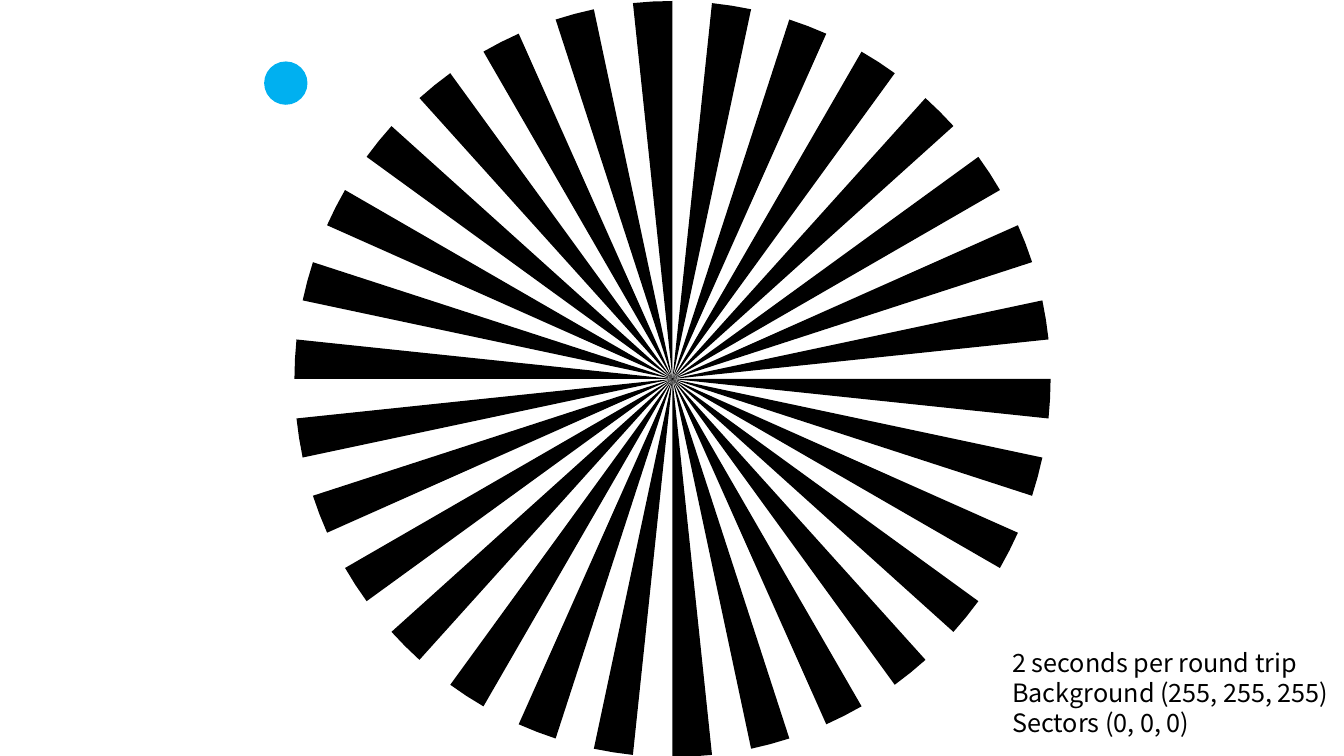
from math import cos, radians, sin

from pptx import Presentation
from pptx import util as u
from pptx.dml.color import RGBColor
from pptx.enum import shapes, text

WIDE, HIGH = 13.33, 7.5
FONT = "Noto Sans CJK JP"
BLACK, BLUE, WHITE = "000000", "00B0F0", "FFFFFF"
NOTES = [
    "2 seconds per round trip",
    "Background (255, 255, 255)",
    "Sectors (0, 0, 0)",
]
COUNT = 30
HUB = (6.67, 3.76)
RADIUS = 3.75
DOT = (2.62, 0.61, 0.43, 0.43)
LABEL = (9.94, 6.37, 3.39, 1.01)


def color(code):
    return RGBColor.from_string(code)


def paint(shape, code):
    shape.shadow.inherit = False
    shape.fill.solid()
    shape.fill.fore_color.rgb = color(code)
    shape.line.fill.background()


def place(box):
    return [u.Inches(side) for side in box]


def rim(angle):
    turn = radians(angle)
    return place((HUB[0] + RADIUS * cos(turn), HUB[1] + RADIUS * sin(turn)))


def add_wheel(slide):
    wheel = slide.shapes.add_group_shape()
    step = 360 / COUNT
    for index in range(COUNT):
        start = -index * step
        arc = [rim(start + step * share) for share in (0, 0.25, 0.5)]
        path = wheel.shapes.build_freeform(*place(HUB))
        path.add_line_segments(arc, close=True)
        paint(path.convert_to_shape(), BLACK)


def add_label(slide):
    frame = slide.shapes.add_textbox(*place(LABEL)).text_frame
    frame.word_wrap = False
    frame.auto_size = text.MSO_AUTO_SIZE.SHAPE_TO_FIT_TEXT
    for index, note in enumerate(NOTES):
        line = frame.add_paragraph() if index else frame.paragraphs[0]
        run = line.add_run()
        run.text = note
        run.font.name = FONT
        run.font.size = u.Pt(18)
        run.font.color.rgb = color(BLACK)


def main():
    deck = Presentation()
    deck.slide_width, deck.slide_height = place((WIDE, HIGH))
    slide = deck.slides.add_slide(deck.slide_layouts[6])
    slide.background.fill.solid()
    slide.background.fill.fore_color.rgb = color(WHITE)
    add_wheel(slide)
    add_label(slide)
    dot = slide.shapes.add_shape(shapes.MSO_SHAPE.OVAL, *place(DOT))
    paint(dot, BLUE)
    deck.save("out.pptx")


if __name__ == "__main__":
    main()
